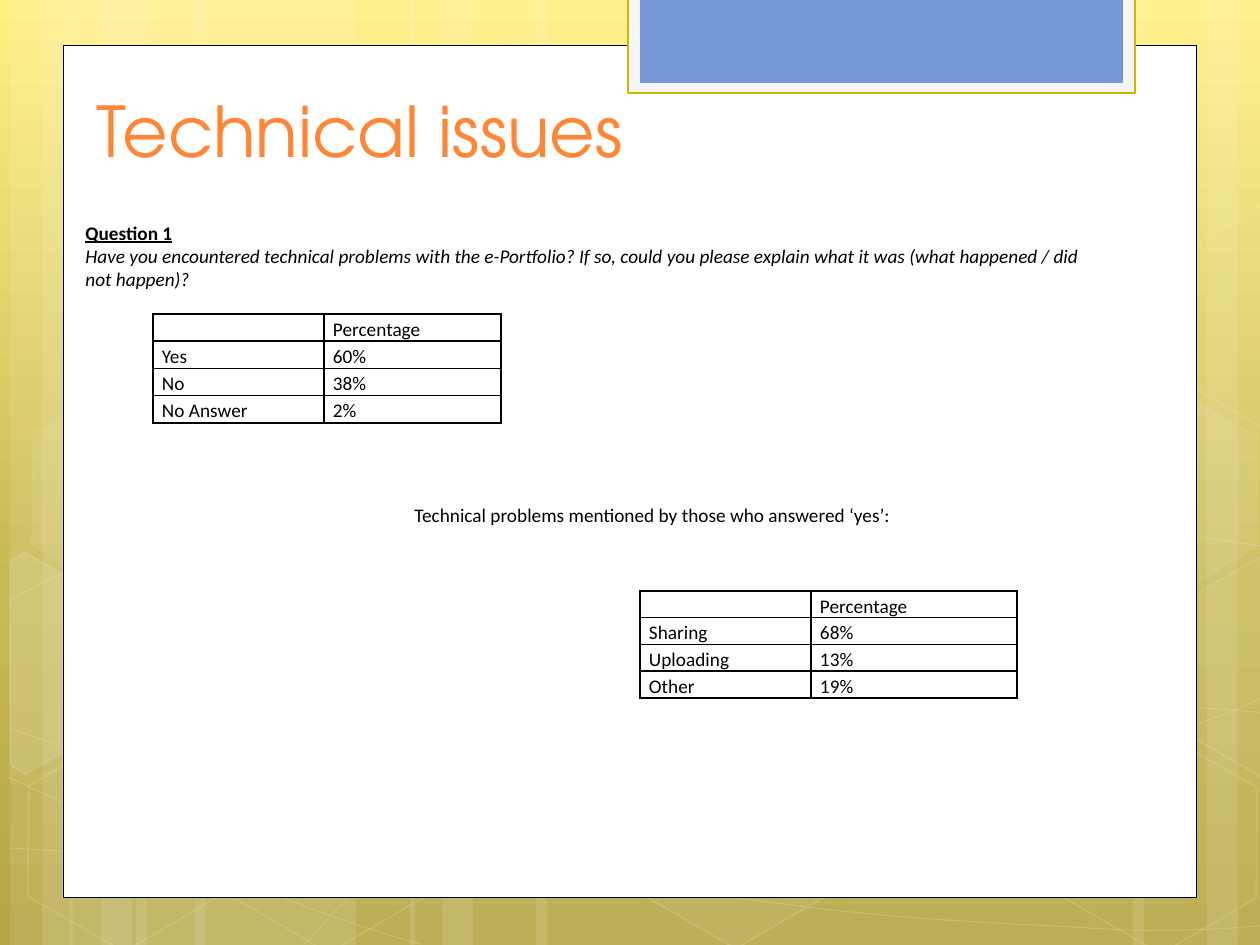
import math
from dataclasses import dataclass

from lxml import etree
from pptx import Presentation
from pptx import util as u
from pptx.dml.color import RGBColor
from pptx.enum import shapes, text
from pptx.oxml.ns import qn

PX = 914400 / 126


@dataclass(frozen=True)
class Theme:
    backdrop: tuple = ((0, "FFF082"), (62, "C7B953"), (100, "B6A744"))
    white: str = "FFFFFF"
    ink: str = "000000"
    title: str = "FE8637"
    mat: str = "F5F5F5"
    gold: str = "CEB500"
    blue: str = "7598D9"
    title_font: str = "TeX Gyre Adventor"
    body_font: str = "Calibri"
    title_size: int = 40
    body_size: int = 11


THEME = Theme()

# Each curve is a start point followed by (control, control, end) triples.
CURVES = (
    ((9, 848), (68, 852), (145, 856), (239, 854), (334, 853), (451, 850), (577, 838),
     (703, 825), (882, 801), (998, 777), (1113, 753), (1231, 717), (1269, 694)),
    ((9, 601), (45, 581), (82, 562), (152, 543), (224, 524), (326, 499), (437, 488),
     (549, 479), (685, 478), (824, 488), (963, 498), (1193, 537), (1269, 547)),
    ((8, 777), (160, 847), (311, 916), (421, 944)),
    ((9, 728), (48, 742), (88, 756), (161, 776), (234, 795), (344, 827), (450, 848),
     (554, 869), (687, 892), (791, 905), (896, 919), (1008, 924), (1075, 927),
     (1140, 932), (1158, 930), (1191, 930), (1223, 929), (1246, 927), (1269, 925)),
    ((305, 944), (328, 919), (350, 893), (381, 871), (411, 848), (454, 824), (489, 805),
     (524, 788), (546, 780), (592, 767), (638, 754), (722, 737), (766, 728),
     (811, 719), (818, 719), (857, 717), (896, 713), (958, 709), (1000, 708),
     (1044, 707), (1116, 708), (1116, 708), (1116, 708), (1201, 708), (1201, 708),
     (1223, 709), (1244, 712), (1256, 712), (1268, 713), (1264, 712), (1268, 713)),
)
# Left, top, fill opacity (0 for none), line opacity
HEXAGONS = ((421, 45, 4, 8), (626, 742, 6, 12), (14, 745, 0, 12), (18, 393, 7, 8),
            (219, 746, 0, 12), (949, 571, 10, 12), (1051, 747, 0, 12), (1051, 396, 7, 8))
TILT = 30
# Hexagons cut by the slide edge: the centre they turn about, then their corners
LEFT_CUT = ((45, 674), ((10, 561), (24, 552), (121, 607), (120, 718), (25, 774), (10, 765)))
RIGHT_CUT = ((1241, 655), ((1167, 611), (1261, 556), (1271, 562), (1271, 772),
                           (1263, 777), (1167, 722)))


def emu(*lengths):
    return [u.Emu(round(length * PX)) for length in lengths]


def set_opacity(element, percent):
    for color in element.iter(qn("a:srgbClr")):
        etree.SubElement(color, qn("a:alpha"), val=str(percent * 1000))


def paint(shape, fill=None, line=None, width=1, fill_opacity=100, line_opacity=100):
    shape.shadow.inherit = False
    if fill and fill_opacity:
        shape.fill.solid()
        shape.fill.fore_color.rgb = RGBColor.from_string(fill)
        if fill_opacity < 100:
            set_opacity(shape.element.spPr.find(qn("a:solidFill")), fill_opacity)
    else:
        shape.fill.background()
    if line:
        shape.line.color.rgb = RGBColor.from_string(line)
        shape.line.width = u.Pt(width)
        if line_opacity < 100:
            set_opacity(shape.element.spPr.find(qn("a:ln")), line_opacity)
    else:
        shape.line.fill.background()


def add_box(slide, box, kind=shapes.MSO_SHAPE.RECTANGLE, **format):
    shape = slide.shapes.add_shape(kind, *emu(*box))
    paint(shape, **format)
    return shape


def add_outline(slide, points, close=True, **format):
    builder = slide.shapes.build_freeform(*points[0], scale=PX)
    builder.add_line_segments(points[1:], close=close)
    shape = builder.convert_to_shape()
    paint(shape, **format)
    return shape


def add_curve(slide, points, **format):
    """Draw a chain of cubic Bezier curves by joining every three segments into one."""
    shape = add_outline(slide, points, close=False, **format)
    segments = list(shape.element.iter(qn("a:lnTo")))
    for i in range(0, len(segments), 3):
        bezier = etree.Element(qn("a:cubicBezTo"))
        segments[i].addprevious(bezier)
        for segment in segments[i:i + 3]:
            bezier.append(segment[0])
            segment.getparent().remove(segment)


def turn(points, center, degrees):
    cosine, sine = math.cos(math.radians(degrees)), math.sin(math.radians(degrees))
    offsets = [(x - center[0], y - center[1]) for x, y in points]
    return [(center[0] + x * cosine - y * sine, center[1] + x * sine + y * cosine)
            for x, y in offsets]


def write(paragraph, words, size=THEME.body_size, font=THEME.body_font, color=THEME.ink,
          bold=False, italic=False, underline=False, spacing=None):
    paragraph.line_spacing = spacing
    if not words:
        etree.SubElement(paragraph._p, qn("a:endParaRPr"), sz=str(size * 100))
        return
    run = paragraph.add_run()
    run.text = words
    run.font.size, run.font.name = u.Pt(size), font
    run.font.color.rgb = RGBColor.from_string(color)
    run.font.bold, run.font.italic, run.font.underline = bold, italic, underline


def add_text(slide, box, anchor, wrap=True):
    frame = slide.shapes.add_textbox(*emu(*box)).text_frame
    frame.word_wrap, frame.vertical_anchor = wrap, anchor
    return frame


def draw_backdrop(slide, box):
    left, top, width, height = box
    slide.background.fill.gradient()
    gradient = slide.element.find(".//" + qn("a:gradFill"))
    gradient.find(qn("a:lin")).set("ang", "5400000")
    stops = gradient.find(qn("a:gsLst"))
    stops[:] = []
    for position, color in THEME.backdrop:
        stop = etree.SubElement(stops, qn("a:gs"), pos=str(position * 1000))
        etree.SubElement(stop, qn("a:srgbClr"), val=color)

    for edge, direction, widest in ((10, 1, 220), (69, 1, 220), (1270, -1, 220), (410, 1, 388)):
        for offset, stripe in ((126, widest), (0, 63), (32, 105)):
            x = edge + offset if direction > 0 else edge - offset - stripe
            add_box(slide, (left + x, top, stripe, height), fill=THEME.white, fill_opacity=10)

    def shifted(points, down=0):
        return [(left + x, top + y + down) for x, y in points]

    for curve in CURVES:
        add_curve(slide, shifted(curve), line=THEME.white, width=0.5, line_opacity=20)
    for x, y, fill_opacity, line_opacity in HEXAGONS:
        hexagon = add_box(slide, (left + x, top + y, 220, 192), shapes.MSO_SHAPE.HEXAGON,
                          fill=THEME.white, line=THEME.white,
                          fill_opacity=fill_opacity, line_opacity=line_opacity)
        hexagon.rotation = TILT
        hexagon.adjustments[0], hexagon.adjustments[1] = 0.285, 1.155
    for (center, corners), down, opacity in ((LEFT_CUT, 0, 10), (RIGHT_CUT, 0, 4),
                                             (RIGHT_CUT, -350, 0)):
        level = turn(corners, center, -TILT)
        cut = add_outline(slide, shifted(level, down), fill=THEME.white, line=THEME.white,
                          fill_opacity=opacity, line_opacity=12)
        cut.rotation = TILT


def draw_banner(slide, box):
    left, top, width, height = box
    add_box(slide, box, fill=THEME.mat, line=THEME.gold, width=1.25)
    add_box(slide, (left + 12, top, width - 24, height - 10), fill=THEME.blue)


def draw_title(slide, box, words):
    frame = add_text(slide, box, text.MSO_ANCHOR.BOTTOM)
    write(frame.paragraphs[0], words, size=THEME.title_size, font=THEME.title_font,
          color=THEME.title)


def draw_question(slide, box, heading, question):
    frame = add_text(slide, box, text.MSO_ANCHOR.MIDDLE)
    write(frame.paragraphs[0], heading, bold=True, underline=True)
    write(frame.add_paragraph(), question, italic=True)


def draw_caption(slide, box, words):
    write(add_text(slide, box, text.MSO_ANCHOR.TOP, wrap=False).paragraphs[0], words)


def add_borders(cell):
    properties = cell._tc.get_or_add_tcPr()
    for index, side in enumerate(("lnL", "lnR", "lnT", "lnB")):
        border = etree.Element(qn("a:" + side), w=str(u.Pt(1)))
        fill = etree.SubElement(border, qn("a:solidFill"))
        etree.SubElement(fill, qn("a:srgbClr"), val=THEME.ink)
        properties.insert(index, border)


def draw_answers(slide, box, answers, label_width=171):
    rows = [("", "Percentage"), *answers]
    table = slide.shapes.add_table(len(rows), 2, *emu(*box)).table
    table.first_row = table.horz_banding = False
    table.columns[0].width, table.columns[1].width = emu(label_width, box[2] - label_width)
    for y, row in enumerate(rows):
        for x, words in enumerate(row):
            cell = table.cell(y, x)
            cell.margin_left, cell.margin_right, cell.margin_top, cell.margin_bottom = emu(9, 9, 0, 0)
            cell.fill.background()
            add_borders(cell)
            write(cell.text_frame.paragraphs[0], words, spacing=1.15)


def main():
    presentation = Presentation()
    presentation.slide_width, presentation.slide_height = emu(1260, 945)
    slide = presentation.slides.add_slide(presentation.slide_layouts[6])
    draw_backdrop(slide, (0, 0, 1260, 945))
    add_box(slide, (63, 45, 1134, 853), fill=THEME.white, line=THEME.ink, width=0.5)
    draw_banner(slide, (628, -3, 507, 96))
    draw_title(slide, (84, 76, 1027, 102), "Technical issues")
    draw_answers(slide, (153, 314, 348, 109), (("Yes", "60%"), ("No", "38%"), ("No Answer", "2%")))
    draw_question(slide, (73, 214, 1032, 83), "Question 1",
                  "Have you encountered technical problems with the e-Portfolio? If so, could you "
                  "please explain what it was (what happened / did not happen)?")
    draw_answers(slide, (640, 591, 377, 107), (("Sharing", "68%"), ("Uploading", "13%"), ("Other", "19%")))
    draw_caption(slide, (402, 497, 507, 74), "Technical problems mentioned by those who answered ‘yes’:")
    presentation.save("out.pptx")


if __name__ == "__main__":
    main()
